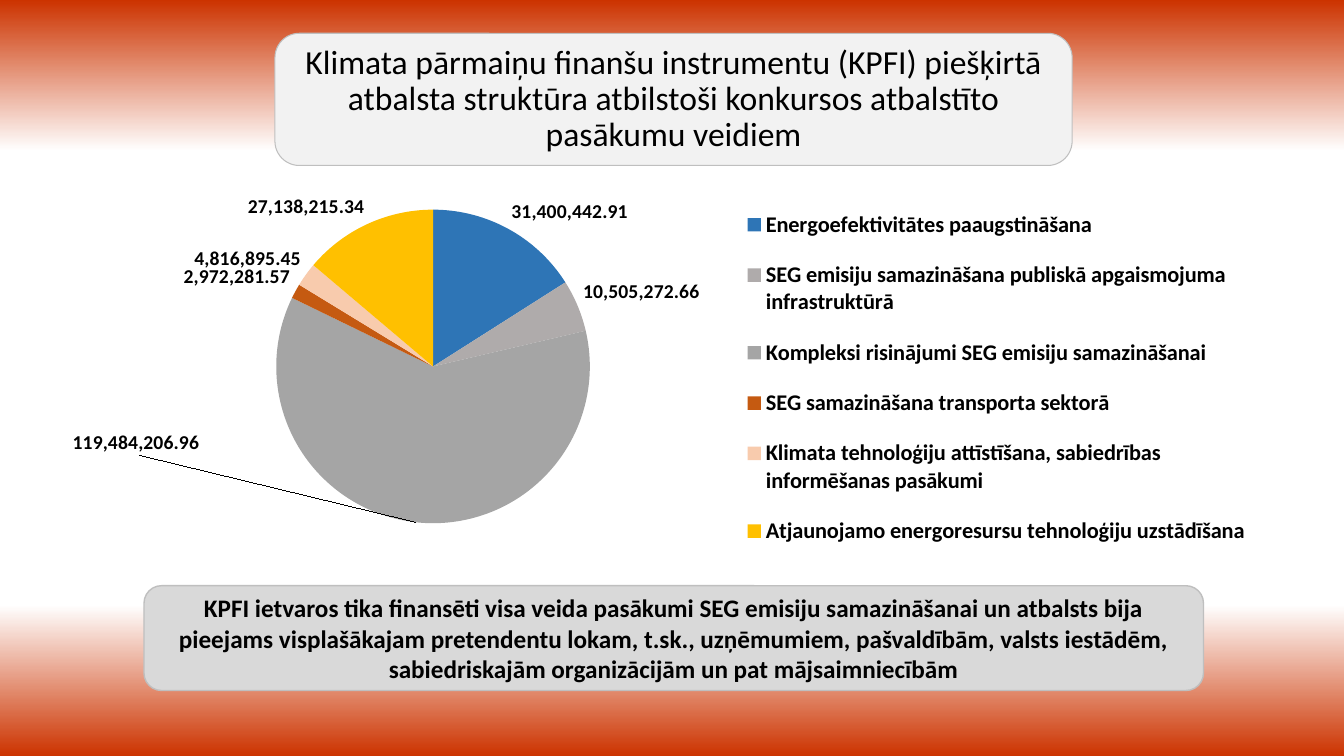
from lxml import etree
from pptx import Presentation
from pptx import util as u
from pptx.chart.data import CategoryChartData
from pptx.dml.color import RGBColor
from pptx.enum import chart as charts, shapes, text
from pptx.oxml import parse_xml
from pptx.oxml.ns import nsdecls, qn

FONT = "Calibri"
NUMBER_FORMAT = "#,##0.00"
BACKGROUND_STOPS = [(0, "CC3300"), (20, "FFFFFF"), (80, "FFFFFF"), (100, "CC3300")]
SUPPORT = [
    ("Energoefektivitātes paaugstināšana", 31400442.91, "2E75B6"),
    ("SEG emisiju samazināšana publiskā apgaismojuma infrastruktūrā", 10505272.66, "AFABAB"),
    ("Kompleksi risinājumi SEG emisiju samazināšanai", 119484206.96, "A5A5A5"),
    ("SEG samazināšana transporta sektorā", 2972281.57, "C55A11"),
    ("Klimata tehnoloģiju attīstīšana, sabiedrības informēšanas pasākumi", 4816895.45, "F8CBAD"),
    ("Atjaunojamo energoresursu tehnoloģiju uzstādīšana", 27138215.34, "FFC000"),
]
COMPLEX_SOLUTIONS = 2
TITLE = ("Klimata pārmaiņu finanšu instrumentu (KPFI) piešķirtā atbalsta struktūra "
         "atbilstoši konkursos atbalstīto pasākumu veidiem")
CONCLUSION = ("KPFI ietvaros tika finansēti visa veida pasākumi SEG emisiju samazināšanai "
              "un atbalsts bija pieejams visplašākajam pretendentu lokam, t.sk., uzņēmumiem, "
              "pašvaldībām, valsts iestādēm, sabiedriskajām organizācijām un pat "
              "mājsaimniecībām")


def color(hex_code):
    return RGBColor.from_string(hex_code)


def set_font(font, size, bold):
    font.name = FONT
    font.size = u.Pt(size)
    font.bold = bold
    font.color.rgb = color("000000")


def paint_background(slide):
    fill = slide.background.fill
    fill.gradient()
    fill.gradient_angle = 90
    stops = slide.element.find(".//" + qn("a:gsLst"))
    for stop in list(stops):
        stops.remove(stop)
    for percent, hex_code in BACKGROUND_STOPS:
        stop = etree.SubElement(stops, qn("a:gs"), pos=str(percent * 1000))
        etree.SubElement(stop, qn("a:srgbClr"), val=hex_code)


def add_layout(parent, index, **settings):
    """Give a chart part a manual layout, as fractions of the chart."""
    for old in parent.findall(qn("c:layout")):
        parent.remove(old)
    layout = parse_xml(f"<c:layout {nsdecls('c')}><c:manualLayout/></c:layout>")
    for name, value in settings.items():
        etree.SubElement(layout[0], qn("c:" + name), val=str(value))
    parent.insert(index, layout)


def add_support_pie(slide, box):
    data = CategoryChartData(number_format=NUMBER_FORMAT)
    data.categories = [name for name, _, _ in SUPPORT]
    data.add_series("Series 1", [value for _, value, _ in SUPPORT])
    pie = slide.shapes.add_chart(charts.XL_CHART_TYPE.PIE, *map(u.Cm, box), data).chart
    pie.has_title = False
    set_font(pie.font, 14, False)

    pie.has_legend = True
    pie.legend.position = charts.XL_LEGEND_POSITION.RIGHT
    pie.legend.include_in_layout = False
    set_font(pie.legend.font, 16, True)

    support = pie.plots[0].series[0]
    for index, (_, _, hex_code) in enumerate(SUPPORT):
        slice_fill = support.points[index].format.fill
        slice_fill.solid()
        slice_fill.fore_color.rgb = color(hex_code)

    labels = support.data_labels
    labels.show_value = True
    labels.number_format = NUMBER_FORMAT
    labels.number_format_is_linked = False
    labels.position = charts.XL_LABEL_POSITION.OUTSIDE_END
    set_font(labels.font, 14, True)
    moved_label = support.points[COMPLEX_SOLUTIONS].data_label
    moved_label.position = charts.XL_LABEL_POSITION.OUTSIDE_END
    set_font(moved_label.font, 14, True)

    root = pie.element
    add_layout(root.find(".//" + qn("c:plotArea")), 0, layoutTarget="inner",
               xMode="edge", yMode="edge", x=0.054, y=0.119, w=0.493, h=0.71)
    add_layout(root.find(".//" + qn("c:legend")), 1,
               xMode="edge", yMode="edge", x=0.55, y=0.07, w=0.44, h=0.86)
    add_layout(root.find(".//" + qn("c:dLbl")), 1, x=-0.23, y=-0.22)


def add_banner(slide, box, wording, size, fill, line_width, bold=False,
               line_spacing=1.0, rounding=0.167):
    banner = slide.shapes.add_shape(shapes.MSO_SHAPE.ROUNDED_RECTANGLE, *map(u.Cm, box))
    banner.adjustments[0] = rounding
    banner.shadow.inherit = False
    banner.fill.solid()
    banner.fill.fore_color.rgb = color(fill)
    banner.line.color.rgb = color("BFBFBF")
    banner.line.width = u.Pt(line_width)
    frame = banner.text_frame
    frame.word_wrap = True
    frame.vertical_anchor = text.MSO_ANCHOR.MIDDLE
    paragraph = frame.paragraphs[0]
    paragraph.text = wording
    paragraph.alignment = text.PP_ALIGN.CENTER
    paragraph.line_spacing = line_spacing
    set_font(paragraph.font, size, bold)


def main():
    deck = Presentation()
    deck.slide_width, deck.slide_height = u.Cm(33.87), u.Cm(19.05)
    slide = deck.slides.add_slide(deck.slide_layouts[6])
    paint_background(slide)
    add_support_pie(slide, (1.83, 3.96, 30.23, 11.13))
    add_banner(slide, (6.93, 0.84, 20.09, 3.33), TITLE, 24, "F2F2F2", 0.75,
               line_spacing=0.9, rounding=0.184)
    add_banner(slide, (3.63, 14.76, 26.7, 2.64), CONCLUSION, 18, "D9D9D9", 1, bold=True)
    deck.save("out.pptx")


if __name__ == "__main__":
    main()
